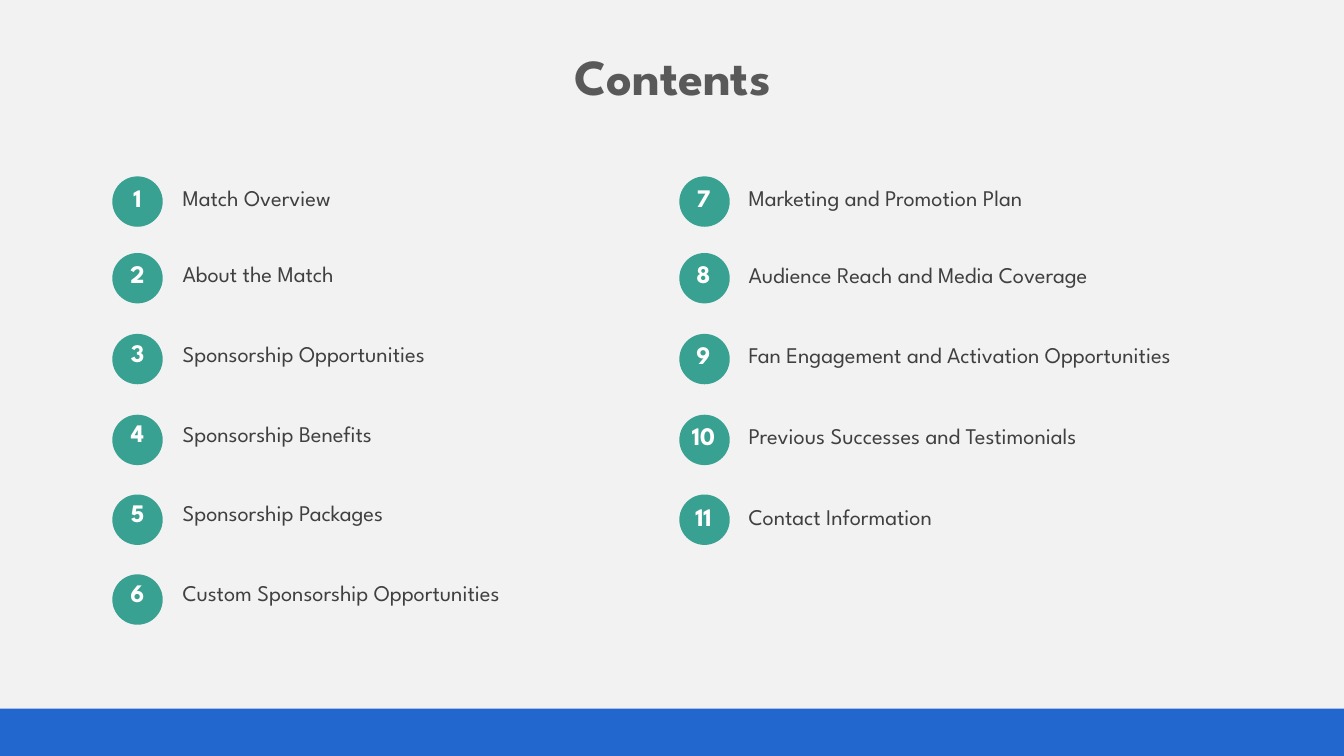
from lxml.etree import SubElement
from pptx import Presentation
from pptx.dml.color import RGBColor
from pptx.enum.shapes import MSO_SHAPE as Shape
from pptx.enum.text import MSO_ANCHOR as Anchor, MSO_AUTO_SIZE as AutoSize, PP_ALIGN as Align
from pptx.oxml.ns import qn
from pptx.util import Pt

PX = 9525
FONT = "League Spartan"
NO_STYLE = "{2D5ABB26-0587-4C30-8999-92F81FD0307C}"
COLORS = {
    "background": "F2F2F2",
    "title": "595959",
    "text": "404040",
    "circle": "38A191",
    "number": "FFFFFF",
    "band": "2167CE",
}
CIRCLE = 48
CIRCLE_TOPS = [168, 241, 318, 395, 471, 547]
TABLE_TOP = 158
FIRST_ROW = 68
LEFT_TOPICS = [
    "Match Overview",
    "About the Match",
    "Sponsorship Opportunities",
    "Sponsorship Benefits",
    "Sponsorship Packages",
    "Custom Sponsorship Opportunities",
]
RIGHT_TOPICS = [
    "Marketing and Promotion Plan",
    "Audience Reach and Media Coverage",
    "Fan Engagement and Activation Opportunities",
    "Previous Successes and Testimonials",
    "Contact Information",
]


def color(name):
    return RGBColor.from_string(COLORS[name])


def box(*lengths):
    return [length * PX for length in lengths]


def write(text_frame, text, size, color_name, bold=False, align=Align.LEFT):
    text_frame.text = text
    paragraph = text_frame.paragraphs[0]
    paragraph.alignment = align
    font = paragraph.font
    font.name, font.size, font.bold = FONT, Pt(size), bold
    font.color.rgb = color(color_name)


def add_title(slide, text):
    title = slide.shapes.title
    title.left, title.top, title.width, title.height = box(194, 38, 893, 68)
    write(title.text_frame, text, 36, "title", True, Align.CENTER)
    title.text_frame.vertical_anchor = Anchor.TOP
    title.text_frame.auto_size = AutoSize.SHAPE_TO_FIT_TEXT


def add_plain_shape(slide, kind, color_name, *lengths):
    shape = slide.shapes.add_shape(kind, *box(*lengths))
    shape.shadow.inherit = False
    shape.fill.solid()
    shape.fill.fore_color.rgb = color(color_name)
    shape.line.fill.background()


def add_border(cell, side):
    properties = cell._tc.get_or_add_tcPr()
    line = SubElement(properties, qn(f"a:ln{side}"), w=str(Pt(0.75)))
    fill = SubElement(line, qn("a:solidFill"))
    SubElement(fill, qn("a:srgbClr"), val=COLORS["background"])


def add_topics(slide, topics, first_number, table_left, circle_left, text_width, row_height):
    """Draw one column of the contents: circles below a table of numbers and topics."""
    for top in CIRCLE_TOPS[:len(topics)]:
        add_plain_shape(slide, Shape.OVAL, "circle", circle_left, top, CIRCLE, CIRCLE)

    heights = [FIRST_ROW] + [row_height] * (len(topics) - 1)
    lengths = box(table_left, TABLE_TOP, CIRCLE + text_width, sum(heights))
    table = slide.shapes.add_table(len(topics), 2, *lengths).table
    table.first_row = table.horz_banding = False
    table._tbl.tblPr.find(qn("a:tableStyleId")).text = NO_STYLE
    table.columns[0].width, table.columns[1].width = box(CIRCLE, text_width)

    for index, (topic, height) in enumerate(zip(topics, heights)):
        table.rows[index].height = height * PX
        number_cell, topic_cell = table.cell(index, 0), table.cell(index, 1)
        write(number_cell.text_frame, str(first_number + index), 18, "number", True, Align.CENTER)
        write(topic_cell.text_frame, topic, 16, "text")
        topic_cell.margin_left = 19 * PX
        if index > 0:
            add_border(number_cell, "T")
        add_border(number_cell, "B")
        for cell in (number_cell, topic_cell):
            cell.vertical_anchor = Anchor.MIDDLE
            cell.fill.background()


def main():
    presentation = Presentation()
    presentation.slide_width, presentation.slide_height = box(1280, 720)
    slide = presentation.slides.add_slide(presentation.slide_layouts[5])
    slide.background.fill.solid()
    slide.background.fill.fore_color.rgb = color("background")

    add_title(slide, "Contents")
    add_topics(slide, RIGHT_TOPICS, len(LEFT_TOPICS) + 1, 646, 647, 518, 77)
    add_topics(slide, LEFT_TOPICS, 1, 107, 107, 474, 76)
    add_plain_shape(slide, Shape.RECTANGLE, "band", 0, 675, 1280, 45)
    presentation.save("out.pptx")


if __name__ == "__main__":
    main()
